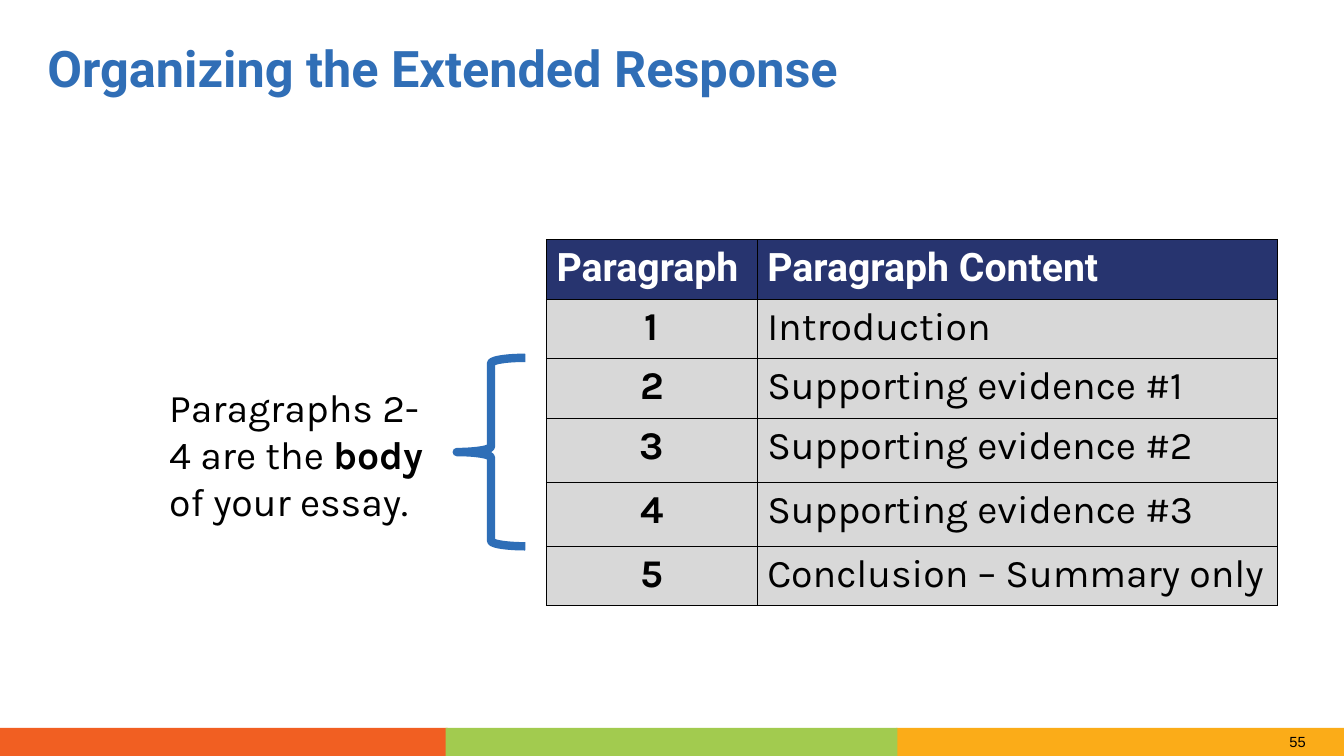
"""Build a slide on how to organize an extended response essay."""
import pptx
import pptx.dml.color
import pptx.enum.shapes
import pptx.enum.text
import pptx.oxml
import pptx.oxml.ns
import pptx.util

PX = 9144
RGB = pptx.dml.color.RGBColor
SHAPE = pptx.enum.shapes.MSO_SHAPE
ALIGN = pptx.enum.text.PP_ALIGN
ANCHOR = pptx.enum.text.MSO_ANCHOR

BLACK = RGB(0x00, 0x00, 0x00)
WHITE = RGB(0xFF, 0xFF, 0xFF)
TITLE_BLUE = RGB(0x30, 0x6E, 0xB6)
BRACE_BLUE = RGB(0x2E, 0x6E, 0xB7)
NAVY = RGB(0x27, 0x34, 0x6F)
GREY = RGB(0xD8, 0xD8, 0xD8)
AMBER = RGB(0xFB, 0xAC, 0x18)
ORANGE = RGB(0xF1, 0x5F, 0x22)
GREEN = RGB(0xA2, 0xCB, 0x4F)

FOOTER_TOP, FOOTER_HEIGHT = 722, 28
FOOTER_BARS = [(889, 444, AMBER), (0, 444, ORANGE), (442, 448, GREEN)]
COLUMN_WIDTHS = [209, 516]
ROW_HEIGHTS = [59, 59, 59, 64, 63, 59]
HEADER = ("Paragraph", "Paragraph Content")
CONTENTS = [
    "Introduction",
    "Supporting evidence #1",
    "Supporting evidence #2",
    "Supporting evidence #3",
    "Conclusion – Summary only",
]


def px(*lengths):
    """Turn pixel lengths into EMU."""
    return [pptx.util.Emu(length * PX) for length in lengths]


def style_span(span, font, size, color, bold=False):
    """Format one run of text."""
    span.font.name = font
    span.font.size = pptx.util.Pt(size)
    span.font.color.rgb = color
    span.font.bold = bold


def set_title(slide, text):
    """Place and format the title placeholder."""
    title = slide.shapes.title
    title.left, title.top, title.width, title.height = px(47, 15, 1240, 111)
    frame = title.text_frame
    frame.text = text
    frame.margin_left = frame.margin_right = 0
    frame.margin_top = frame.margin_bottom = 0
    frame.vertical_anchor = ANCHOR.MIDDLE
    para = frame.paragraphs[0]
    para.alignment = ALIGN.LEFT
    para.line_spacing = 0.9
    style_span(para.runs[0], "Roboto", 36, TITLE_BLUE, bold=True)


def add_bar(slide, left, width, color):
    """Add one coloured bar of the footer."""
    bar = slide.shapes.add_shape(
        SHAPE.RECTANGLE, *px(left, FOOTER_TOP, width, FOOTER_HEIGHT))
    bar.shadow.inherit = False
    bar.fill.solid()
    bar.fill.fore_color.rgb = color
    bar.line.fill.background()


def add_text(slide, frame_px, spans, font, size):
    """Add a wrapping text box of (text, bold) spans and return it."""
    box = slide.shapes.add_textbox(*px(*frame_px))
    box.text_frame.word_wrap = True
    para = box.text_frame.paragraphs[0]
    for text, bold in spans:
        span = para.add_run()
        span.text = text
        style_span(span, font, size, BLACK, bold)
    return box


def add_brace(slide, frame_px):
    """Add the brace that groups the body paragraphs."""
    brace = slide.shapes.add_shape(SHAPE.LEFT_BRACE, *px(*frame_px))
    brace.shadow.inherit = False
    brace.adjustments[0] = 0.08
    brace.adjustments[1] = 0.5
    brace.fill.background()
    brace.line.color.rgb = BRACE_BLUE
    brace.line.width = pptx.util.Pt(6)


def set_borders(cell):
    """Draw a thin black line on every side of a cell."""
    properties = cell._tc.get_or_add_tcPr()
    for side in ("lnL", "lnR", "lnT", "lnB"):
        properties.append(pptx.oxml.parse_xml(
            f'<a:{side} {pptx.oxml.ns.nsdecls("a")} w="{pptx.util.Pt(1)}">'
            f'<a:solidFill><a:srgbClr val="{BLACK}"/></a:solidFill></a:{side}>'))


def fill_cell(cell, text, font, color, fill, bold, alignment):
    """Write and format one table cell."""
    set_borders(cell)
    cell.fill.solid()
    cell.fill.fore_color.rgb = fill
    cell.text = text
    para = cell.text_frame.paragraphs[0]
    para.alignment = alignment
    style_span(para.runs[0], font, 28, color, bold)


def add_outline_table(slide, left, top):
    """Add the table of paragraph numbers and their content."""
    table = slide.shapes.add_table(
        len(ROW_HEIGHTS), len(COLUMN_WIDTHS),
        *px(left, top, sum(COLUMN_WIDTHS), sum(ROW_HEIGHTS))).table
    table.horz_banding = False
    for column, width in zip(table.columns, px(*COLUMN_WIDTHS)):
        column.width = width
    for row, height in zip(table.rows, px(*ROW_HEIGHTS)):
        row.height = height
    for column, text in enumerate(HEADER):
        fill_cell(table.cell(0, column), text, "Roboto", WHITE, NAVY, True, ALIGN.LEFT)
    for number, content in enumerate(CONTENTS, start=1):
        fill_cell(table.cell(number, 0), str(number), "Karla", BLACK, GREY, True, ALIGN.CENTER)
        fill_cell(table.cell(number, 1), content, "Karla", BLACK, GREY, False, ALIGN.LEFT)


def main():
    """Build and save the deck."""
    deck = pptx.Presentation()
    deck.slide_width, deck.slide_height = px(1333, 750)
    slide = deck.slides.add_slide(deck.slide_layouts[5])
    for left, width, color in FOOTER_BARS:
        add_bar(slide, left, width, color)
    number = add_text(slide, (1269, FOOTER_TOP, 38, FOOTER_HEIGHT), [("55", False)], "Arial", 10.5)
    number.text_frame.vertical_anchor = ANCHOR.MIDDLE
    set_title(slide, "Organizing the Extended Response")
    note = add_text(
        slide, (158, 375, 274, 211),
        [("Paragraphs 2-4 are the ", False), ("body", True), (" of your essay.", False)],
        "Karla", 28)
    note.text_frame.paragraphs[0].space_after = pptx.util.Pt(12)
    add_outline_table(slide, 542, 238)
    add_brace(slide, (453, 355, 68, 187))
    deck.save("out.pptx")


if __name__ == "__main__":
    main()
